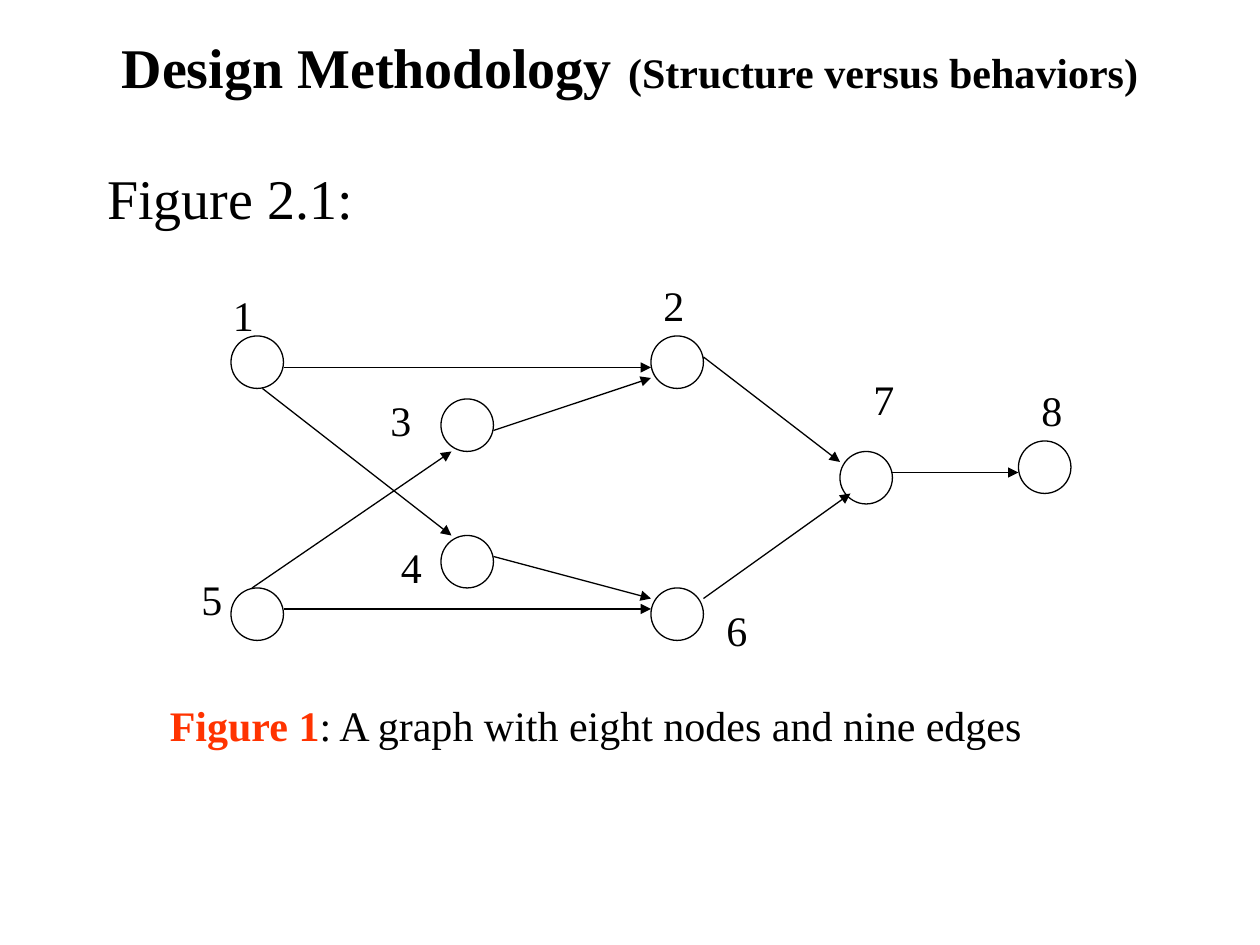
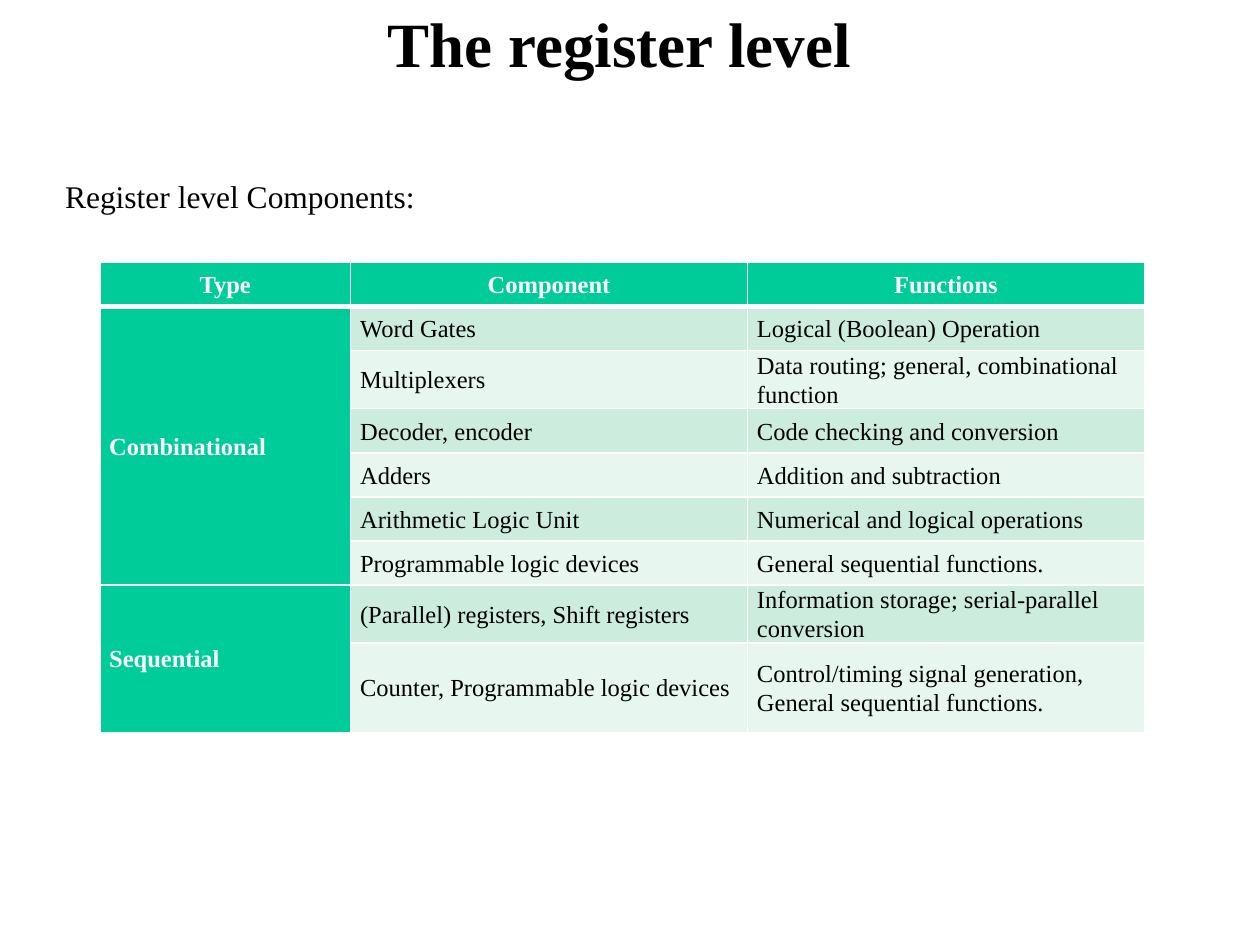
from lxml.etree import SubElement
from pptx import Presentation
from pptx.dml.color import RGBColor
from pptx.enum.shapes import MSO_CONNECTOR, MSO_SHAPE
from pptx.enum.text import MSO_ANCHOR, MSO_AUTO_SIZE, PP_ALIGN
from pptx.oxml.ns import qn
from pptx.util import Emu, Pt

BLACK = RGBColor(0x00, 0x00, 0x00)
WHITE = RGBColor(0xFF, 0xFF, 0xFF)
RED = RGBColor(0xFF, 0x33, 0x00)
GREEN = RGBColor(0x00, 0xCC, 0x99)
BANDS = (RGBColor(0xCC, 0xEC, 0xDE), RGBColor(0xE7, 0xF6, 0xEF))
FONT = "Times New Roman"
EMU_PER_PX = 7620
NODE_SIZE = 50

NODES = {
    "1": ((40, 60), (-10, -50)),
    "2": ((440, 60), (0, -60)),
    "3": ((240, 120), (-60, -10)),
    "4": ((240, 250), (-50, 0)),
    "5": ((40, 300), (-40, -20)),
    "6": ((440, 300), (60, 10)),
    "7": ((620, 170), (20, -80)),
    "8": ((790, 160), (10, -60)),
}
EDGES = [
    ("1", (50, 30), "2", (0, 30)),
    ("5", (50, 20), "6", (0, 20)),
    ("1", (30, 50), "4", (10, 0)),
    ("5", (20, 0), "3", (10, 50)),
    ("3", (50, 30), "2", (0, 40)),
    ("4", (50, 20), "6", (0, 10)),
    ("2", (50, 20), "7", (0, 10)),
    ("6", (50, 10), "7", (10, 40)),
    ("7", (50, 20), "8", (0, 30)),
]
HEADERS = ("Type", "Component", "Functions")
COMPONENTS = {
    "Combinational": [
        ("Word Gates", "Logical (Boolean) Operation"),
        ("Multiplexers", "Data routing; general, combinational function"),
        ("Decoder, encoder", "Code checking and conversion"),
        ("Adders", "Addition and subtraction"),
        ("Arithmetic Logic Unit", "Numerical and logical operations"),
        ("Programmable logic devices", "General sequential functions."),
    ],
    "Sequential": [
        ("(Parallel) registers, Shift registers",
         "Information storage; serial-parallel conversion"),
        ("Counter, Programmable logic devices",
         "Control/timing signal generation, General sequential functions."),
    ],
}


def px(*lengths):
    return [Emu(length * EMU_PER_PX) for length in lengths]


def shift(origin, offset):
    return origin[0] + offset[0], origin[1] + offset[1]


def write(frame, text, size=24, color=BLACK, bold=False, align=None,
          line_spacing=None, before_percent=None):
    paragraph = frame.paragraphs[0]
    run = paragraph.add_run()
    run.text = text
    run.font.name = FONT
    run.font.size = Pt(size)
    run.font.bold = bold
    run.font.color.rgb = color
    if align is not None:
        paragraph.alignment = align
    if line_spacing is not None:
        paragraph.line_spacing = line_spacing
    if before_percent is not None:
        paragraph.space_before = Pt(0)
        spacing = paragraph._p.pPr.find(qn("a:spcBef"))
        spacing.clear()
        SubElement(spacing, qn("a:spcPct"), val=str(before_percent * 1000))
    return paragraph


def place(shape, box):
    shape.left, shape.top, shape.width, shape.height = px(*box)
    shape.text_frame.auto_size = MSO_AUTO_SIZE.NONE
    return shape.text_frame


def add_title(slide, box, *parts):
    frame = place(slide.shapes.title, box)
    frame.vertical_anchor = MSO_ANCHOR.MIDDLE
    for text, size in parts:
        write(frame, text, size=size, bold=True, align=PP_ALIGN.CENTER)


def add_body(slide, box, text, **text_format):
    frame = place(slide.placeholders[1], box)
    paragraph = write(frame, text, **text_format)
    SubElement(paragraph._p.get_or_add_pPr(), qn("a:buNone"))


def add_label(slide, box, *parts):
    frame = slide.shapes.add_textbox(*px(*box)).text_frame
    frame.word_wrap = True
    frame.auto_size = MSO_AUTO_SIZE.SHAPE_TO_FIT_TEXT
    for text, color, bold in parts:
        write(frame, text, color=color, bold=bold, before_percent=50)


def add_node(slide, corner):
    circle = slide.shapes.add_shape(
        MSO_SHAPE.OVAL, *px(*corner, NODE_SIZE, NODE_SIZE))
    circle.shadow.inherit = False
    circle.fill.solid()
    circle.fill.fore_color.rgb = WHITE
    circle.line.color.rgb = BLACK
    circle.line.width = Pt(0.75)


def add_arrow(slide, start, end):
    arrow = slide.shapes.add_connector(
        MSO_CONNECTOR.STRAIGHT, *px(*start, *end))
    arrow.line.color.rgb = BLACK
    arrow.line.width = Pt(0.75)
    SubElement(arrow.line._get_or_add_ln(), qn("a:tailEnd"), type="triangle")
    SubElement(arrow._element.spPr, qn("a:effectLst"))


def add_graph(slide, origin):
    corners = {name: shift(origin, corner)
               for name, (corner, _) in NODES.items()}
    for corner in corners.values():
        add_node(slide, corner)
    for source, leave, target, enter in EDGES:
        add_arrow(slide, shift(corners[source], leave),
                  shift(corners[target], enter))
    for name, (_, offset) in NODES.items():
        add_label(slide, (*shift(corners[name], offset), 40, 60),
                  (name, BLACK, False))


def set_borders(cell, top=1, bottom=1):
    properties = cell._tc.get_or_add_tcPr()
    for side, width in (("L", 1), ("R", 1), ("T", top), ("B", bottom)):
        line = SubElement(properties, qn(f"a:ln{side}"), w=str(Pt(width)))
        fill = SubElement(line, qn("a:solidFill"))
        SubElement(fill, qn("a:srgbClr"), val=str(WHITE))


def format_cell(cell, fill, top=1, bottom=1):
    set_borders(cell, top, bottom)
    cell.fill.solid()
    cell.fill.fore_color.rgb = fill
    cell.vertical_anchor = MSO_ANCHOR.MIDDLE
    cell.margin_left, cell.margin_right = px(9, 9)
    cell.margin_top = cell.margin_bottom = 0


def add_component_table(slide, left, top):
    widths = (239, 378, 378)
    heights = [42] * 8 + [85]
    table = slide.shapes.add_table(
        len(heights), len(widths),
        *px(left, top, sum(widths), sum(heights))).table
    table.horz_banding = False
    for column, width in zip(table.columns, px(*widths)):
        column.width = width
    for row, height in zip(table.rows, px(*heights)):
        row.height = height
    body_text = dict(size=14, line_spacing=1.07)
    head_text = dict(body_text, color=WHITE, bold=True)

    for column, header in enumerate(HEADERS):
        cell = table.cell(0, column)
        format_cell(cell, GREEN, bottom=3)
        write(cell.text_frame, header, align=PP_ALIGN.CENTER, **head_text)

    row = 1
    for kind, entries in COMPONENTS.items():
        first = row
        for entry in entries:
            edge = 3 if row == 1 else 1
            format_cell(table.cell(row, 0), GREEN, top=edge)
            for column, text in enumerate(entry, start=1):
                cell = table.cell(row, column)
                format_cell(cell, BANDS[(row - 1) % 2], top=edge)
                write(cell.text_frame, text, **body_text)
            row += 1
        table.cell(first, 0).merge(table.cell(row - 1, 0))
        write(table.cell(first, 0).text_frame, kind, **head_text)


def build_graph_slide(slide):
    add_title(slide, (90, 20, 1020, 80), ("Design Methodology", 32),
              (" ", 36), ("(Structure versus behaviors)", 24))
    add_body(slide, (90, 150, 1020, 650), "Figure 2.1:", size=32,
             before_percent=50)
    add_graph(slide, (180, 260))
    add_label(slide, (150, 660, 910, 60), ("Figure 1", RED, True),
              (": A graph with eight nodes and nine edges", BLACK, False))


def build_register_slide(slide):
    add_title(slide, (80, 0, 1020, 80), ("The register level", 36))
    add_body(slide, (50, 170, 890, 680), "Register level Components:",
             size=18, line_spacing=0.8, before_percent=20)
    add_component_table(slide, 95, 250)


def main():
    presentation = Presentation()
    presentation.slide_width, presentation.slide_height = px(1200, 900)
    layout = presentation.slide_layouts[1]
    for build in (build_graph_slide, build_register_slide):
        build(presentation.slides.add_slide(layout))
    presentation.save("out.pptx")


if __name__ == "__main__":
    main()
